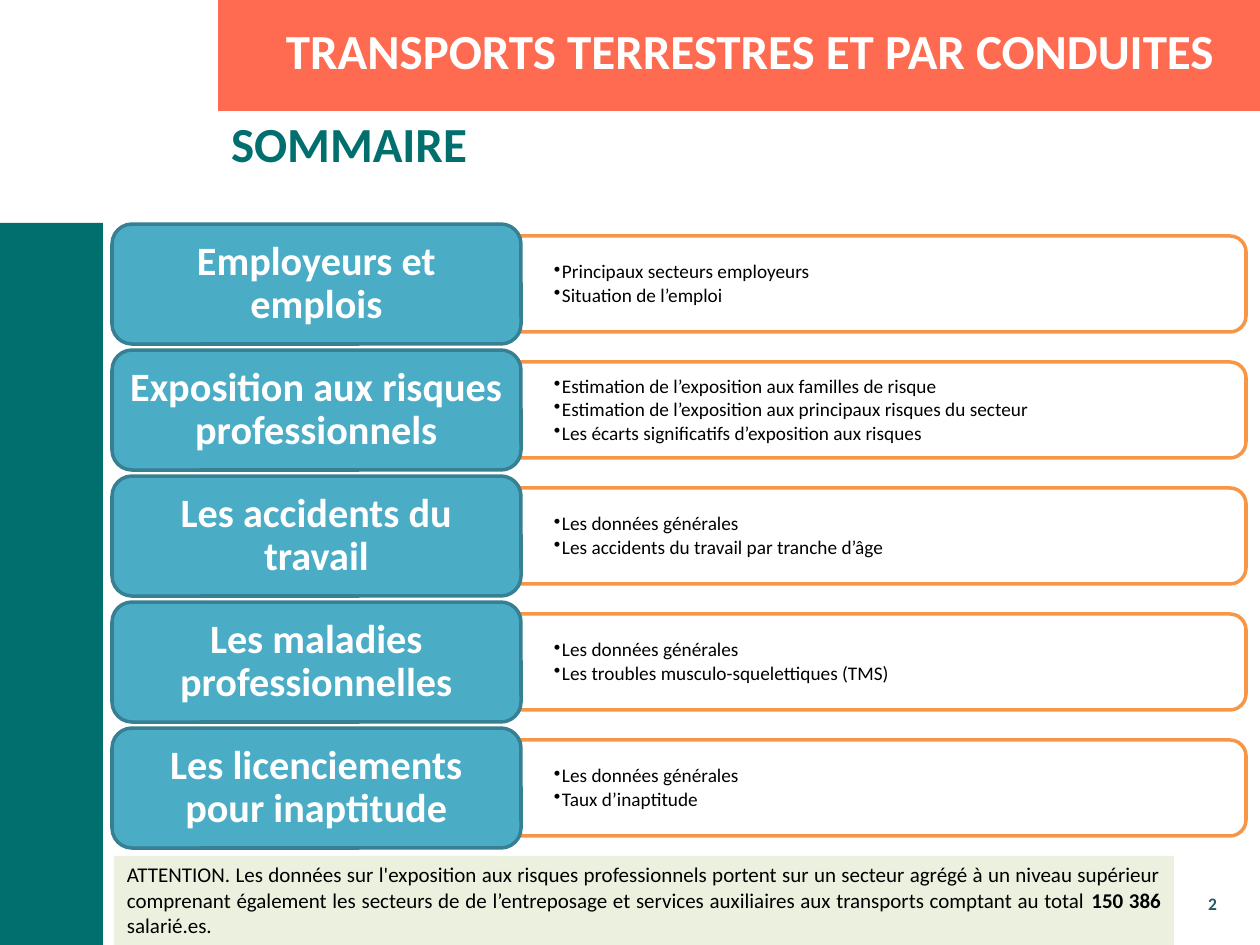
from lxml import etree
from pptx import Presentation
from pptx.dml.color import RGBColor
from pptx.enum.shapes import MSO_SHAPE as Preset
from pptx.enum.text import MSO_ANCHOR as Anchor, PP_ALIGN as Align
from pptx.oxml.ns import qn
from pptx.util import Pt

CORAL = RGBColor(0xFF, 0x6B, 0x50)
GREEN = RGBColor(0x00, 0x6F, 0x6E)
DARK_TEAL = RGBColor(0x21, 0x59, 0x68)
BLUE = RGBColor(0x4B, 0xAC, 0xC6)
BLUE_EDGE = RGBColor(0x37, 0x7F, 0x92)
ORANGE = RGBColor(0xF7, 0x96, 0x46)
PALE_GREEN = RGBColor(0xEB, 0xF1, 0xDE)
WHITE = RGBColor(0xFF, 0xFF, 0xFF)
BLACK = RGBColor(0x00, 0x00, 0x00)

FIRST_ROW, ROW_PITCH, ROW_HEIGHT = 224, 126, 120
LABEL_LEFT, LABEL_WIDTH = 112, 409
PANEL_LEFT, PANEL_WIDTH, PANEL_HEIGHT = 520, 726, 96

SECTIONS = [
    ("Employeurs et emplois",
     ["Principaux secteurs employeurs", "Situation de l’emploi"]),
    ("Exposition aux risques professionnels",
     ["Estimation de l’exposition aux familles de risque",
      "Estimation de l’exposition aux principaux risques du secteur",
      "Les écarts significatifs d’exposition aux risques"]),
    ("Les accidents du travail",
     ["Les données générales", "Les accidents du travail par tranche d’âge"]),
    ("Les maladies professionnelles",
     ["Les données générales", "Les troubles musculo-squelettiques (TMS)"]),
    ("Les licenciements pour inaptitude",
     ["Les données générales", "Taux d’inaptitude"]),
]

WARNING = [
    ("ATTENTION. Les données sur l'exposition aux risques professionnels portent "
     "sur un secteur agrégé à un niveau supérieur comprenant également les secteurs "
     "de de l’entreposage et services auxiliaires aux transports comptant au total ",
     False),
    ("150 386 ", True),
    ("salarié.es.", False),
]


def px(length):
    """Convert pixels to EMU at 126 pixels to the inch."""
    return round(length * 914400 / 126)


def add_block(slide, preset, box, fill, edge=None):
    """Add a filled preset shape, outlined only if an edge colour is given."""
    block = slide.shapes.add_shape(preset, *map(px, box))
    block.shadow.inherit = False
    block.fill.solid()
    block.fill.fore_color.rgb = fill
    if edge is None:
        block.line.fill.background()
    else:
        block.line.color.rgb = edge
        block.line.width = Pt(2)
    return block


def set_frame(frame, anchor=Anchor.TOP, insets=(13, 6)):
    """Set wrapping, anchor and the side and top insets of a text frame."""
    frame.word_wrap = True
    frame.vertical_anchor = anchor
    side, end = map(px, insets)
    frame.margin_left = frame.margin_right = side
    frame.margin_top = frame.margin_bottom = end


def add_run(paragraph, text, size, color, bold=False):
    """Add one formatted run to a paragraph."""
    run = paragraph.add_run()
    run.text = text
    run.font.name = "Calibri"
    run.font.size = Pt(size)
    run.font.bold = bold
    run.font.color.rgb = color


def add_heading(slide, box, text, size, color, align=Align.LEFT):
    """Add a bold single-line text box."""
    frame = slide.shapes.add_textbox(*map(px, box)).text_frame
    set_frame(frame)
    frame.paragraphs[0].alignment = align
    add_run(frame.paragraphs[0], text, size, color, True)


def add_topics(slide, box, topics):
    """Add a bulleted list of topics."""
    frame = slide.shapes.add_textbox(*map(px, box)).text_frame
    set_frame(frame, Anchor.MIDDLE, (34, 18))
    for index, topic in enumerate(topics):
        item = frame.add_paragraph() if index else frame.paragraphs[0]
        item.level = 1
        item.line_spacing = 0.9
        item.space_after = Pt(1.65)
        properties = item._p.get_or_add_pPr()
        properties.set("marL", str(px(8)))
        properties.set("indent", str(-px(8)))
        etree.SubElement(properties, qn("a:buChar")).set("char", "•")
        add_run(item, topic, 11, BLACK)


def add_section(slide, top, title, topics):
    """Add one summary row: outlined panel, its topics and the label."""
    center_x, center_y = PANEL_LEFT + PANEL_WIDTH / 2, top + ROW_HEIGHT / 2
    panel = add_block(slide, Preset.ROUND_2_SAME_RECTANGLE,
                      (center_x - PANEL_HEIGHT / 2, center_y - PANEL_WIDTH / 2,
                       PANEL_HEIGHT, PANEL_WIDTH), WHITE, ORANGE)
    panel.rotation = 90
    add_topics(slide, (PANEL_LEFT, top + 17, 721, 87), topics)

    label = add_block(slide, Preset.ROUNDED_RECTANGLE,
                      (LABEL_LEFT, top, LABEL_WIDTH, ROW_HEIGHT), BLUE, BLUE_EDGE)
    set_frame(label.text_frame, Anchor.MIDDLE, (12, 6))
    heading = label.text_frame.paragraphs[0]
    heading.alignment = Align.CENTER
    heading.line_spacing = 0.9
    add_run(heading, title, 23, WHITE, True)


def add_warning(slide):
    """Add the justified warning at the foot of the slide."""
    note = add_block(slide, Preset.RECTANGLE, (114, 856, 1060, 89), PALE_GREEN)
    set_frame(note.text_frame)
    paragraph = note.text_frame.paragraphs[0]
    paragraph.alignment = Align.JUSTIFY
    for text, bold in WARNING:
        add_run(paragraph, text, 12, BLACK, bold)


def main():
    """Build the summary slide and save it."""
    deck = Presentation()
    deck.slide_width, deck.slide_height = px(1260), px(945)
    slide = deck.slides.add_slide(deck.slide_layouts[6])

    add_block(slide, Preset.RECTANGLE, (218, 0, 1042, 111), CORAL)
    add_heading(slide, (1101, 887, 129, 40), "2", 10, DARK_TEAL, Align.RIGHT)
    add_block(slide, Preset.RECTANGLE, (0, 223, 103, 722), GREEN)
    add_heading(slide, (218, 107, 1040, 107), "SOMMAIRE", 28, GREEN)
    for index, (title, topics) in enumerate(SECTIONS):
        add_section(slide, FIRST_ROW + index * ROW_PITCH, title, topics)
    add_warning(slide)
    add_heading(slide, (273, 15, 974, 72),
                "TRANSPORTS TERRESTRES ET PAR CONDUITES", 28, WHITE)

    deck.save("out.pptx")


if __name__ == "__main__":
    main()
